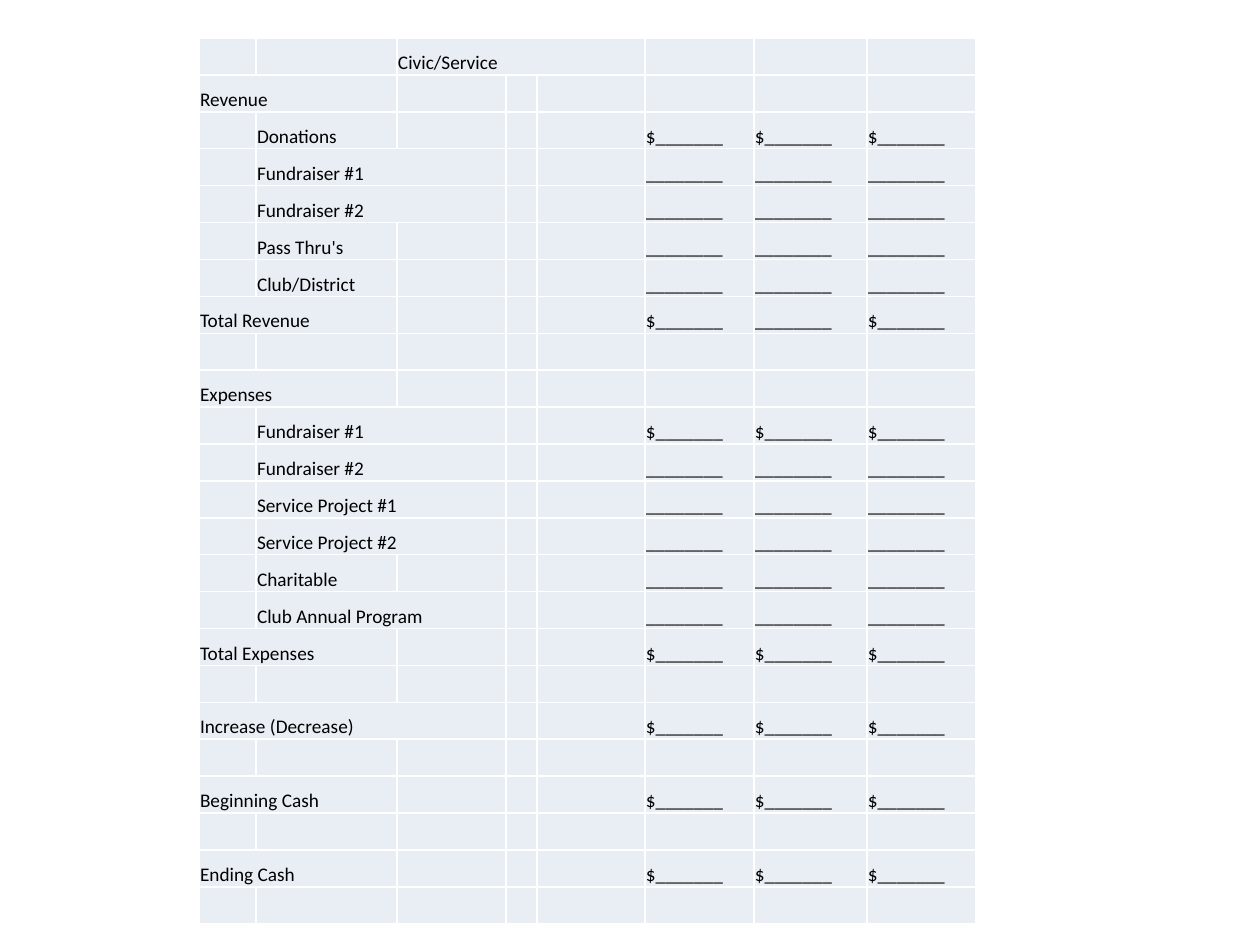
from dataclasses import dataclass

from lxml import etree
from pptx import Presentation
from pptx import util as u
from pptx.dml.color import RGBColor
from pptx.enum import text
from pptx.oxml.ns import qn

PX = 914400 // 126


@dataclass
class Theme:
    font: str = "Calibri"
    size: int = 11
    ink: str = "000000"
    fill: str = "E9EDF4"
    rule: str = "FFFFFF"
    rule_pt: int = 1


THEME = Theme()
BOX = (199, 38, 777, 886)
COLS = (57, 141, 109, 31, 108, 109, 113, 109)
MONEY = 5  # first of the three amount columns

# label, its column, columns spanned, first sign of each amount
ROWS = [
    ("Civic/Service", 2, 3, ""),
    ("Revenue", 0, 2, ""),
    ("Donations", 1, 1, "$$$"),
    ("Fundraiser #1", 1, 2, "___"),
    ("Fundraiser #2", 1, 2, "___"),
    ("Pass Thru's", 1, 1, "___"),
    ("Club/District", 1, 1, "___"),
    ("Total Revenue", 0, 2, "$_$"),
    None,
    ("Expenses", 0, 2, ""),
    ("Fundraiser #1", 1, 2, "$$$"),
    ("Fundraiser #2", 1, 2, "___"),
    ("Service Project #1", 1, 2, "___"),
    ("Service Project #2", 1, 2, "___"),
    ("Charitable", 1, 1, "___"),
    ("Club Annual Program", 1, 2, "___"),
    ("Total Expenses", 0, 2, "$$$"),
    None,
    ("Increase (Decrease)", 0, 3, "$$$"),
    None,
    ("Beginning Cash", 0, 2, "$$$"),
    None,
    ("Ending Cash", 0, 2, "$$$"),
    None,
]


def edge(cell):
    """Rule all four sides of a cell."""
    props = cell._tc.get_or_add_tcPr()
    for side in ("lnL", "lnR", "lnT", "lnB"):
        line = etree.SubElement(props, qn(f"a:{side}"), w=str(u.Pt(THEME.rule_pt)))
        paint = etree.SubElement(line, qn("a:solidFill"))
        etree.SubElement(paint, qn("a:srgbClr"), val=THEME.rule)


def dress(cell):
    """Give a cell its rules, fill, insets and type size."""
    edge(cell)
    cell.fill.solid()
    cell.fill.fore_color.rgb = RGBColor.from_string(THEME.fill)
    look = dict(margin_left=PX, margin_right=PX, margin_top=PX, margin_bottom=0,
                vertical_anchor=text.MSO_ANCHOR.BOTTOM)
    for name, value in look.items():
        setattr(cell, name, value)
    # an empty cell keeps its row low only through its end mark
    mark = etree.SubElement(cell.text_frame.paragraphs[0]._p, qn("a:endParaRPr"))
    mark.set("sz", str(THEME.size * 100))


def write(cell, words):
    run = cell.text_frame.paragraphs[0].add_run()
    run.text = words
    for name, value in dict(name=THEME.font, size=u.Pt(THEME.size)).items():
        setattr(run.font, name, value)
    run.font.color.rgb = RGBColor.from_string(THEME.ink)


def budget(slide, box):
    high = box[3]
    frame = slide.shapes.add_table(len(ROWS), len(COLS), *(n * PX for n in box))
    table = frame.table
    table.first_row = table.horz_banding = False
    for col, width in zip(table.columns, COLS):
        col.width = width * PX
    for row in table.rows:
        row.height = high * PX // len(ROWS)
    for cell in table.iter_cells():
        dress(cell)
    for r, entry in enumerate(ROWS):
        if entry is None:
            continue
        label, col, span, signs = entry
        if span > 1:
            table.cell(r, col).merge(table.cell(r, col + span - 1))
        write(table.cell(r, col), label)
        for c, sign in enumerate(signs, MONEY):
            write(table.cell(r, c), sign + "_" * 7)


def main():
    deck = Presentation()
    deck.slide_width, deck.slide_height = u.Inches(10), u.Inches(7.5)
    slide = deck.slides.add_slide(deck.slide_layouts[6])
    budget(slide, BOX)
    deck.save("out.pptx")


if __name__ == "__main__":
    main()
